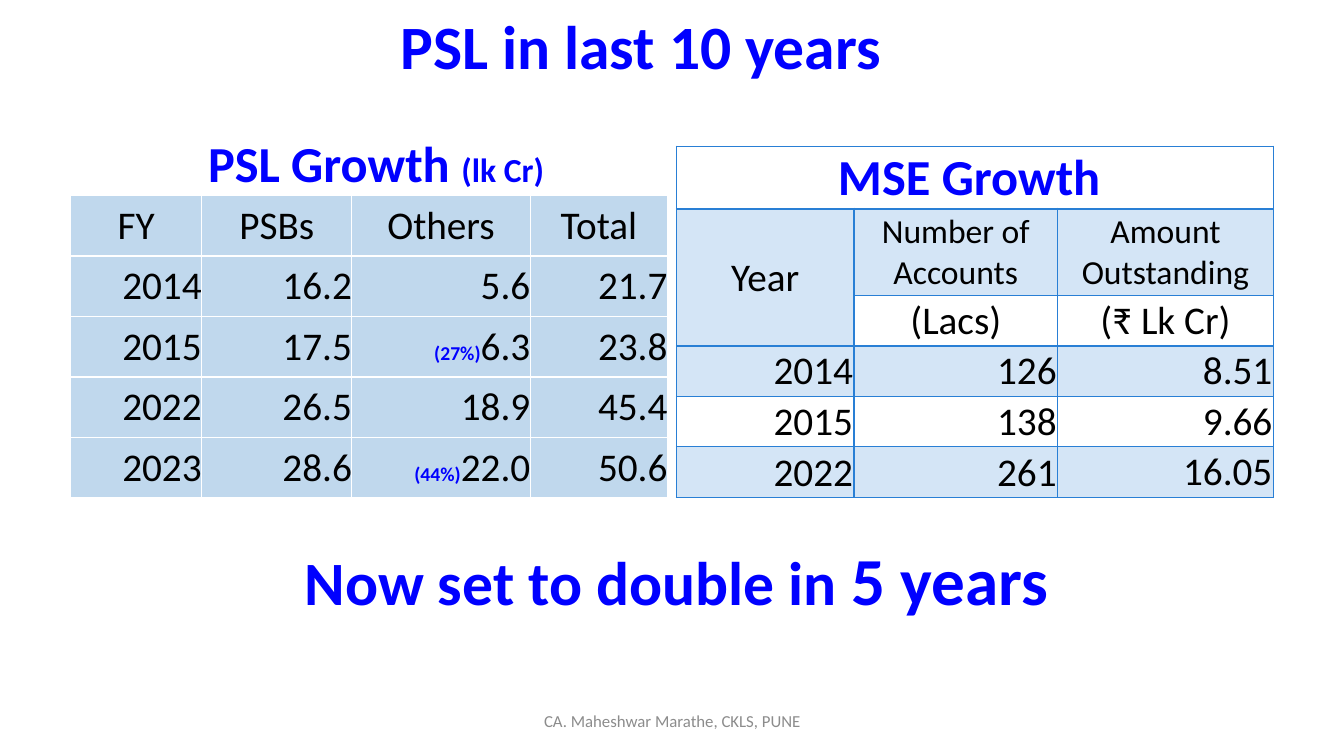
from lxml.etree import SubElement
from pptx import Presentation
from pptx.dml.color import RGBColor
from pptx.enum.text import MSO_ANCHOR as Anchor, PP_ALIGN as Align
from pptx.oxml.ns import qn
from pptx.util import Inches, Pt

BLUE, BLACK, GREY, WHITE = "0000FF", "000000", "8C8C8C", "FFFFFF"
PALE, ACCENT = "C0D8ED", "297FD5"

PSL_HEADING = [("PSL Growth ", 36, BLUE, True), ("(lk Cr)", 24, BLUE, True)]
SLIDE_HEADING = [("PSL in last 10 years", 44, BLUE, True)]
OUTLOOK = [("Now set to double in ", 44, BLUE, True), ("5 years", 48, BLUE, True)]
CREDIT = [("CA. Maheshwar Marathe, CKLS, PUNE", 12, GREY, False)]

PSL_COLUMNS = [1.3, 1.49, 1.77, 1.36]
PSL_ROWS = [
    ["FY", "PSBs", "Others", "Total"],
    ["2014", "16.2", "5.6", "21.7"],
    ["2015", "17.5", "6.3", "23.8"],
    ["2022", "26.5", "18.9", "45.4"],
    ["2023", "28.6", "22.0", "50.6"],
]
OTHERS_SHARE = {(2, 2): "(27%)", (4, 2): "(44%)"}

MSE_COLUMNS = [1.76, 2.02, 2.14]
MSE_HEIGHTS = [0.5, 0.86, 0.5, 0.5, 0.5, 0.5]
MSE_ROWS = [
    ["MSE Growth ", "", ""],
    ["Year", "Number of Accounts", "Amount Outstanding"],
    ["", "(Lacs)", "(₹ Lk Cr)"],
    ["2014", "126", "8.51"],
    ["2015", "138", "9.66"],
    ["2022", "261", "16.05"],
]


def rgb(value):
    return RGBColor.from_string(value)


def write(frame, parts, align, inset=None, anchor=Anchor.MIDDLE):
    paragraph = frame.paragraphs[0]
    paragraph.alignment = align
    for words, size, color, bold in parts:
        run = paragraph.add_run()
        run.text = words
        run.font.name = "Calibri"
        run.font.size = Pt(size)
        run.font.bold = bold
        run.font.color.rgb = rgb(color)
    if inset is None:
        frame.word_wrap = True
        frame.vertical_anchor = anchor
    return paragraph


def write_cell(cell, parts, align, inset, anchor=Anchor.MIDDLE):
    cell.margin_left = cell.margin_right = cell.margin_top = Inches(inset)
    cell.margin_bottom = 0
    cell.vertical_anchor = anchor
    write(cell.text_frame, parts, align, inset)


def outline(cell, color, **widths):
    properties = cell._tc.get_or_add_tcPr()
    for side in "LRTB":
        width = Pt(widths.get(side, 1))
        line = SubElement(properties, qn(f"a:ln{side}"), w=str(width))
        fill = SubElement(line, qn("a:solidFill"))
        SubElement(fill, qn("a:srgbClr"), val=color)


def paint(cell, color, opacity=100):
    cell.fill.solid()
    cell.fill.fore_color.rgb = rgb(color)
    if opacity < 100:
        tint = cell._tc.tcPr.find(qn("a:solidFill")).find(qn("a:srgbClr"))
        SubElement(tint, qn("a:alpha"), val=str(opacity * 1000))


def add_grid(slide, left, top, widths, heights):
    box = map(Inches, (left, top, sum(widths), sum(heights)))
    grid = slide.shapes.add_table(len(heights), len(widths), *box).table
    grid.first_row = grid.horz_banding = False
    for column, width in zip(grid.columns, widths):
        column.width = Inches(width)
    for row, height in zip(grid.rows, heights):
        row.height = Inches(height)
    return grid


def add_mse_growth(slide):
    grid = add_grid(slide, 6.71, 1.45, MSE_COLUMNS, MSE_HEIGHTS)
    grid.cell(0, 0).merge(grid.cell(0, 2))
    grid.cell(1, 0).merge(grid.cell(2, 0))
    last = len(MSE_ROWS) - 1
    for r, values in enumerate(MSE_ROWS):
        for c, value in enumerate(values):
            cell = grid.cell(r, c)
            outline(cell, ACCENT, B=2 if r == 0 else 1, T=2 if r == 1 else 1)
            if r % 2 or (r, c) == (2, 0):
                paint(cell, ACCENT, 20)
            else:
                cell.fill.background()
            if not value:
                continue
            size = 36 if r == 0 else 24 if r == 1 and c else 28
            color = BLUE if r == 0 else BLACK
            low = r == 0 or (r == last and c < 2)
            write_cell(cell, [(value, size, color, r == 0)],
                       Align.RIGHT if r > 2 else Align.CENTER, 0.01,
                       Anchor.BOTTOM if low else Anchor.MIDDLE)


def add_psl_growth(slide):
    grid = add_grid(slide, 0.7, 1.94, PSL_COLUMNS, [0.6] * len(PSL_ROWS))
    for r, values in enumerate(PSL_ROWS):
        for c, value in enumerate(values):
            cell = grid.cell(r, c)
            outline(cell, WHITE)
            paint(cell, PALE)
            parts = [(value, 28, BLACK, False)]
            if (r, c) in OTHERS_SHARE:
                parts.insert(0, (OTHERS_SHARE[r, c], 14, BLUE, True))
            write_cell(cell, parts, Align.RIGHT if r else Align.CENTER, 0)


def add_words(slide, parts, *box):
    words = slide.shapes.add_textbox(*map(Inches, box))
    return write(words.text_frame, parts, Align.CENTER)


def main():
    deck = Presentation()
    deck.slide_width, deck.slide_height = Inches(13.33), Inches(7.5)
    slide = deck.slides.add_slide(deck.slide_layouts[5])

    add_mse_growth(slide)
    title = slide.shapes.title
    title.left, title.top = Inches(0.91), Inches(1.36)
    title.width, title.height = Inches(5.64), Inches(0.57)
    write(title.text_frame, PSL_HEADING, Align.CENTER).line_spacing = 0.9
    add_psl_growth(slide)
    add_words(slide, CREDIT, 4.42, 6.95, 4.5, 0.4).space_after = Pt(6)
    add_words(slide, SLIDE_HEADING, 1.41, 0.21, 9.9, 0.57).line_spacing = 0.9
    add_words(slide, OUTLOOK, 1.76, 5.51, 9.9, 0.57).line_spacing = 0.9

    deck.save("out.pptx")


if __name__ == "__main__":
    main()
